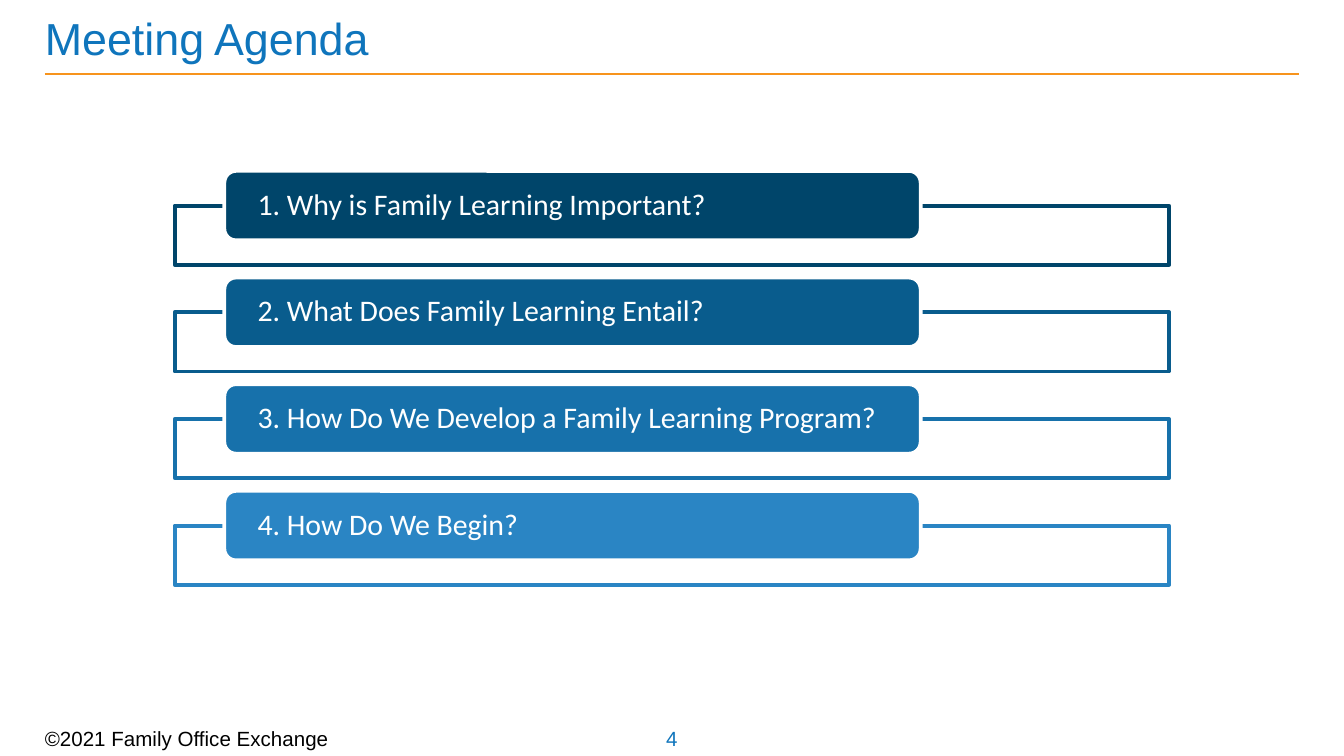
from pptx import Presentation
from pptx.dml.color import RGBColor as RGB
from pptx.enum.shapes import MSO_CONNECTOR as Conn, MSO_SHAPE as Kind
from pptx.enum.text import MSO_ANCHOR as Anchor, PP_ALIGN as Align
from pptx.oxml.ns import qn
from pptx.util import Pt

HUES = {
    "white": "FFFFFF", "black": "000000", "blue": "0F75BC", "gold": "F7941D",
    "navy": "00456A", "deep": "095C8D", "mid": "1771AB", "light": "2A85C4",
}
ITEMS = [
    ("1. Why is Family Learning Important?", "navy"),
    ("2. What Does Family Learning Entail?", "deep"),
    ("3. How Do We Develop a Family Learning Program?", "mid"),
    ("4. How Do We Begin?", "light"),
]
TOP, STEP = 91.6, 57.14


class Deck:
    def __init__(self, wide, high):
        self.file = Presentation()
        self.file.slide_width, self.file.slide_height = Pt(wide), Pt(high)
        self.slide = self.file.slides.add_slide(self.file.slide_layouts[5])

    def hue(self, name):
        return RGB.from_string(HUES[name])

    def words(self, shape, text, size, hue, font="Arial", pad=(0, 0, 0, 0),
              align=Align.LEFT):
        frame = shape.text_frame
        frame.text = text
        frame.word_wrap = True
        frame.vertical_anchor = Anchor.MIDDLE
        (frame.margin_left, frame.margin_top,
         frame.margin_right, frame.margin_bottom) = map(Pt, pad)
        para = frame.paragraphs[0]
        para.alignment = align
        face = para.runs[0].font
        face.name, face.size = font, Pt(size)
        face.color.rgb = self.hue(hue)
        return para

    def title(self, text, x, y, w, h):
        shape = self.slide.shapes.title
        shape.left, shape.top, shape.width, shape.height = map(Pt, (x, y, w, h))
        self.words(shape, text, 24, "blue", pad=(0, 3.6, 7.2, 3.6))

    def label(self, text, x, y, w, h, hue, align=Align.LEFT):
        shape = self.slide.shapes.add_textbox(*map(Pt, (x, y, w, h)))
        self.words(shape, text, 11, hue, align=align)

    def rule(self, x, y, end, hue):
        line = self.slide.shapes.add_connector(
            Conn.STRAIGHT, Pt(x), Pt(y), Pt(end), Pt(y))
        line.line.color.rgb = self.hue(hue)
        line.line.width = Pt(1)
        props = line._element.spPr
        props.append(props.makeelement(qn("a:effectLst"), {}))

    def box(self, kind, x, y, w, h, fill, edge):
        shape = self.slide.shapes.add_shape(kind, *map(Pt, (x, y, w, h)))
        shape.shadow.inherit = False
        shape.fill.solid()
        shape.fill.fore_color.rgb = self.hue(fill)
        shape.line.color.rgb = self.hue(edge)
        shape.line.width = Pt(2)
        return shape

    def item(self, text, y, hue):
        self.box(Kind.RECTANGLE, 93.6, y + 18.6, 532.8, 31.7, "white", hue)
        pill = self.box(Kind.ROUNDED_RECTANGLE, 120.2, y, 373, 37.2, hue, "white")
        para = self.words(pill, text, 16, "white", "Calibri", (16, 0, 16, 0))
        para.line_spacing = 0.9


def main():
    deck = Deck(720, 405)
    deck.rule(24, 39.8, 696, "gold")
    deck.label("4", 353, 388.8, 14, 13.7, "blue", Align.CENTER)
    deck.label("©2021 Family Office Exchange", 24, 391, 180, 9.4, "black")
    deck.title("Meeting Agenda", 24, 2.9, 583, 34.6)
    for row, (text, hue) in enumerate(ITEMS):
        deck.item(text, TOP + row * STEP, hue)
    deck.file.save("out.pptx")


if __name__ == "__main__":
    main()
